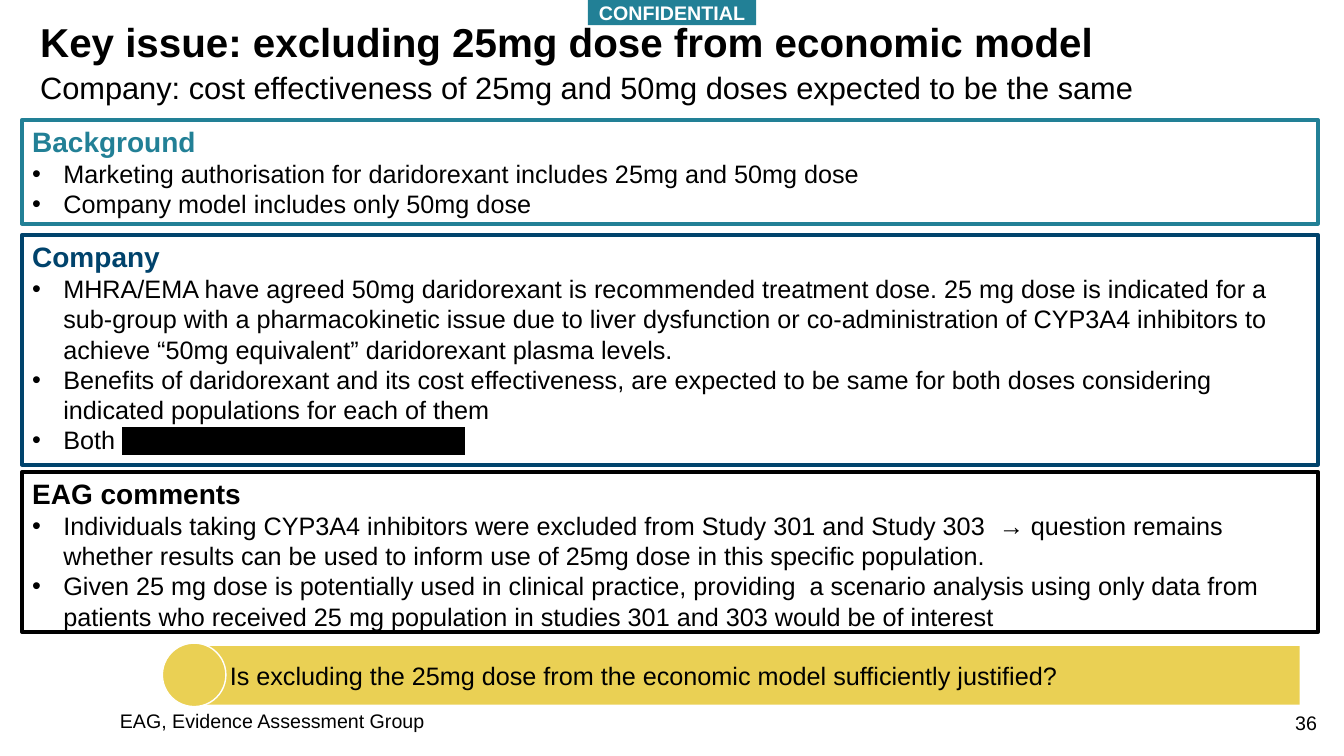
from lxml.etree import SubElement
from pptx import Presentation
from pptx.dml.color import RGBColor
from pptx.enum.shapes import MSO_SHAPE
from pptx.enum.text import MSO_ANCHOR, PP_ALIGN
from pptx.oxml import parse_xml
from pptx.oxml.ns import nsdecls, qn
from pptx.util import Inches, Pt

SLIDE_W, SLIDE_H = Inches(13.33), Inches(7.5)
FONT = "Arial"
COLORS = {
    "black": "000000",
    "white": "FFFFFF",
    "teal": "228096",
    "navy": "00436C",
    "yellow": "EAD054",
}
PANEL_X, PANEL_W = 1.65, 96.4

# Panels: heading, colour, top and height in percent of the slide, bullets
PANELS = [
    ("Background", "teal", 15.87, 13.73, [
        "Marketing authorisation for daridorexant includes 25mg and 50mg dose",
        "Company model includes only 50mg dose",
    ]),
    ("Company", "navy", 31.07, 30.4, [
        "MHRA/EMA have agreed 50mg daridorexant is recommended treatment dose. "
        "25 mg dose is indicated for a sub-group with a pharmacokinetic issue due to "
        "liver dysfunction or co-administration of CYP3A4 inhibitors to achieve "
        "“50mg equivalent” daridorexant plasma levels.",
        "Benefits of daridorexant and its cost effectiveness, are expected to be same "
        "for both doses considering indicated populations for each of them",
        "Both ",
    ]),
    ("EAG comments", "black", 62.4, 21.2, [
        "Individuals taking CYP3A4 inhibitors were excluded from Study 301 and "
        "Study 303  → question remains whether results can be used to inform use of "
        "25mg dose in this specific population.",
        "Given 25 mg dose is potentially used in clinical practice, providing  a scenario "
        "analysis using only data from patients who received 25 mg population in "
        "studies 301 and 303 would be of interest",
    ]),
]


def rgb(name):
    return RGBColor.from_string(COLORS[name])


def area(x, y, w, h):
    """Turn percentages of the slide into lengths."""
    return [int(size * share / 100)
            for size, share in zip((SLIDE_W, SLIDE_H) * 2, (x, y, w, h))]


def add_run(p, text, size=18, color="black", bold=False, underline=None):
    r = p.add_run()
    r.text = text
    font = r.font
    font.name, font.size, font.bold = FONT, Pt(size), bold
    font.underline = underline
    font.color.rgb = rgb(color)
    return r


def add_redacted(p, text):
    r = add_run(p, text, underline=True)
    highlight = parse_xml(f'<a:highlight {nsdecls("a")}>'
                          f'<a:srgbClr val="{COLORS["black"]}"/></a:highlight>')
    r.font.fill  # the highlight follows the text fill
    r._r.rPr.find(qn("a:solidFill")).addnext(highlight)


def add_bullet(tf, text):
    p = tf.add_paragraph()
    pPr = p._p.get_or_add_pPr()
    pPr.set("marL", str(Inches(0.31)))
    pPr.set("indent", str(-Inches(0.31)))
    SubElement(pPr, qn("a:buFont"), typeface=FONT)
    SubElement(pPr, qn("a:buChar"), char="•")
    add_run(p, text)
    return p


def add_label(s, text, box, align=PP_ALIGN.LEFT, spacing=None, **fmt):
    tf = s.shapes.add_textbox(*area(*box)).text_frame
    tf.word_wrap = True
    p = tf.paragraphs[0]
    p.alignment, p.line_spacing = align, spacing
    add_run(p, text, **fmt)


def add_block(s, box, kind=MSO_SHAPE.RECTANGLE, fill=None, line=None, width=1,
              anchor=MSO_ANCHOR.MIDDLE, align=PP_ALIGN.LEFT):
    sp = s.shapes.add_shape(kind, *area(*box))
    sp.shadow.inherit = False
    if fill:
        sp.fill.solid()
        sp.fill.fore_color.rgb = rgb(fill)
    else:
        sp.fill.background()
    if line:
        sp.line.color.rgb = rgb(line)
        sp.line.width = Pt(width)
    else:
        sp.line.fill.background()
    tf = sp.text_frame
    tf.word_wrap = True
    tf.vertical_anchor = anchor
    tf.paragraphs[0].alignment = align
    return tf


def add_panel(s, heading, color, top, height, bullets):
    tf = add_block(s, (PANEL_X, top, PANEL_W, height), line=color, width=3,
                   anchor=MSO_ANCHOR.TOP)
    add_run(tf.paragraphs[0], heading, size=20, color=color, bold=True)
    return [add_bullet(tf, text) for text in bullets]


def main():
    prs = Presentation()
    prs.slide_width, prs.slide_height = SLIDE_W, SLIDE_H
    s = prs.slides.add_slide(prs.slide_layouts[6])

    # Title and subtitle
    add_label(s, "Key issue: excluding 25mg dose from economic model",
              (2.25, 2.4, 92.27, 8.67), spacing=0.9, size=28.8, bold=True)
    add_label(s, "Company: cost effectiveness of 25mg and 50mg doses expected to be the same",
              (2.25, 7.73, 92.27, 6.13), spacing=1.14, size=22)

    # Panels, with the redacted end of the company's last point
    background, company, eag = [add_panel(s, *panel) for panel in PANELS]
    add_redacted(company[-1], "xxxx xxxxx xxxxxx xxxxxx xxxx")

    # Question banner
    tf = add_block(s, (15, 85.47, 81.7, 7.73), fill="yellow")
    tf.margin_left = Inches(0.28)
    add_run(tf.paragraphs[0],
            "Is excluding the 25mg dose from the economic model sufficiently justified?")
    add_block(s, (12.08, 85.07, 4.73, 8.4), MSO_SHAPE.OVAL, fill="yellow", line="white")

    # Confidentiality tag
    tf = add_block(s, (43.74, 0, 12.53, 3.33), fill="teal", align=PP_ALIGN.CENTER)
    add_run(tf.paragraphs[0], "CONFIDENTIAL", size=14, color="white", bold=True)

    # Footer
    add_label(s, "EAG, Evidence Assessment Group", (8.18, 93.47, 85.37, 5.33),
              spacing=0.9, size=14)
    add_label(s, "36", (94.9, 93.33, 3.83, 5.33), align=PP_ALIGN.RIGHT, size=14)

    prs.save("out.pptx")


if __name__ == "__main__":
    main()
